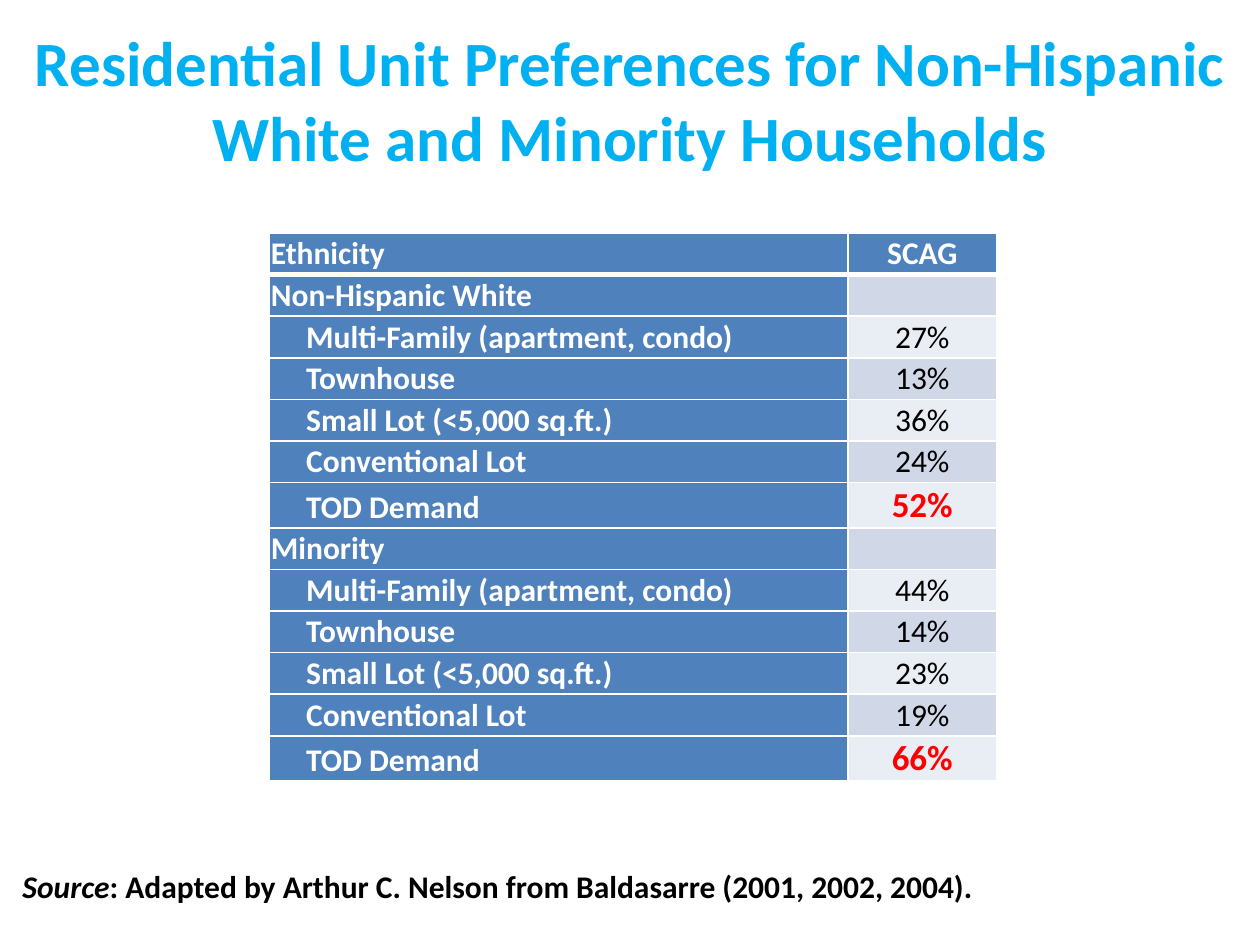
"""Build a slide with a table of residential unit preferences by ethnicity."""
from lxml.etree import SubElement
from pptx import Presentation
from pptx.dml.color import RGBColor
from pptx.enum.text import MSO_ANCHOR, MSO_AUTO_SIZE, PP_ALIGN
from pptx.oxml.ns import qn
from pptx.util import Inches, Pt

THEME = {
    "font": "Calibri", "title_size": 36, "body_size": 18, "key_size": 20,
    "title": "00B0F0", "header": "4F81BD", "white": "FFFFFF",
    "black": "000000", "key": "FF0000", "bands": ("D0D8E8", "E9EDF4"),
}
TITLE = "Residential Unit Preferences for Non-Hispanic White and Minority Households"
HEADER = ("Ethnicity", "SCAG")
UNITS = ("Multi-Family (apartment, condo)", "Townhouse",
         "Small Lot (<5,000 sq.ft.)", "Conventional Lot", "TOD Demand")
GROUPS = {
    "Non-Hispanic White": ("27%", "13%", "36%", "24%", "52%"),
    "Minority": ("44%", "14%", "23%", "19%", "66%"),
}
SOURCE = ("Source", ": Adapted by Arthur C. Nelson from Baldasarre (2001, 2002, 2004).")
COLUMN_WIDTHS = (4.59, 1.18)
ROW_HEIGHT = 0.33
CELL_MARGIN = 0.01
UNIT_INDENT = 0.28


def add_text(paragraph, text, size=THEME["body_size"], color=THEME["black"],
             bold=True, italic=False, align=PP_ALIGN.LEFT, indent=0):
    paragraph.alignment = align
    if indent:
        properties = paragraph._p.get_or_add_pPr()
        properties.set("marL", str(Inches(indent)))
        properties.set("indent", "0")
    run = paragraph.add_run()
    run.text = text
    font = run.font
    font.name, font.size, font.bold, font.italic = THEME["font"], Pt(size), bold, italic
    font.color.rgb = RGBColor.from_string(color)


def format_cell(cell, fill, bottom_width):
    cell.margin_left = cell.margin_right = Inches(CELL_MARGIN)
    cell.margin_top = cell.margin_bottom = Inches(CELL_MARGIN)
    cell.vertical_anchor = MSO_ANCHOR.BOTTOM
    properties = cell._tc.get_or_add_tcPr()
    for side, width in (("L", 1), ("R", 1), ("T", 1), ("B", bottom_width)):
        line = SubElement(properties, qn(f"a:ln{side}"), w=str(Pt(width)))
        solid = SubElement(line, qn("a:solidFill"))
        SubElement(solid, qn("a:srgbClr"), val=THEME["white"])
    cell.fill.solid()
    cell.fill.fore_color.rgb = RGBColor.from_string(fill)


def add_title(slide):
    title = slide.shapes.title
    title.left, title.top = Inches(0), Inches(0.16)
    title.width, title.height = Inches(10), Inches(1.25)
    frame = title.text_frame
    frame.auto_size, frame.word_wrap = MSO_AUTO_SIZE.NONE, True
    frame.vertical_anchor = MSO_ANCHOR.MIDDLE
    add_text(frame.paragraphs[0], TITLE, size=THEME["title_size"],
             color=THEME["title"], align=PP_ALIGN.CENTER)


def add_preferences(slide):
    rows = [(*HEADER, 0)]
    for group, values in GROUPS.items():
        rows.append((group, "", 0))
        rows += [(unit, value, UNIT_INDENT) for unit, value in zip(UNITS, values)]
    table = slide.shapes.add_table(
        len(rows), len(COLUMN_WIDTHS), Inches(2.14), Inches(1.85),
        Inches(sum(COLUMN_WIDTHS)), Inches(ROW_HEIGHT * len(rows))).table
    for column, width in zip(table.columns, COLUMN_WIDTHS):
        column.width = Inches(width)
    for index, (label, value, indent) in enumerate(rows):
        is_header, is_key = index == 0, label == UNITS[-1]
        label_cell, value_cell = table.cell(index, 0), table.cell(index, 1)
        bottom_width = 3 if is_header else 1
        band = THEME["bands"][(index - 1) % 2]
        format_cell(label_cell, THEME["header"], bottom_width)
        format_cell(value_cell, THEME["header"] if is_header else band, bottom_width)
        add_text(label_cell.text_frame.paragraphs[0], label,
                 color=THEME["white"], indent=indent)
        if value:
            color = "white" if is_header else "key" if is_key else "black"
            add_text(value_cell.text_frame.paragraphs[0], value,
                     size=THEME["key_size" if is_key else "body_size"],
                     color=THEME[color], bold=is_header or is_key,
                     align=PP_ALIGN.CENTER)


def add_source(slide):
    box = slide.shapes.add_textbox(Inches(0.08), Inches(6.83), Inches(9.77), Inches(0.4))
    box.text_frame.word_wrap = True
    for text, italic in zip(SOURCE, (True, False)):
        add_text(box.text_frame.paragraphs[0], text, italic=italic)


presentation = Presentation()
presentation.slide_width, presentation.slide_height = Inches(10), Inches(7.5)
slide = presentation.slides.add_slide(presentation.slide_layouts.get_by_name("Title Only"))
add_title(slide)
add_preferences(slide)
add_source(slide)
presentation.save("out.pptx")
